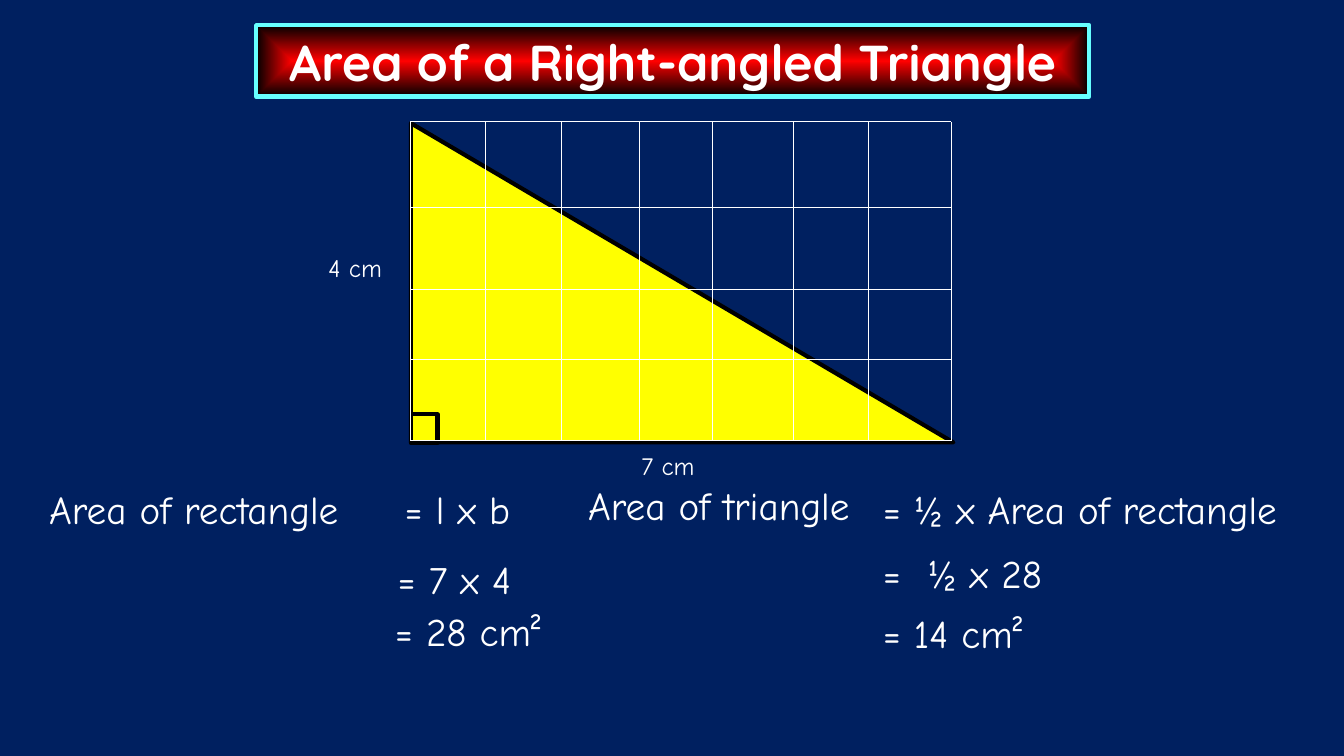
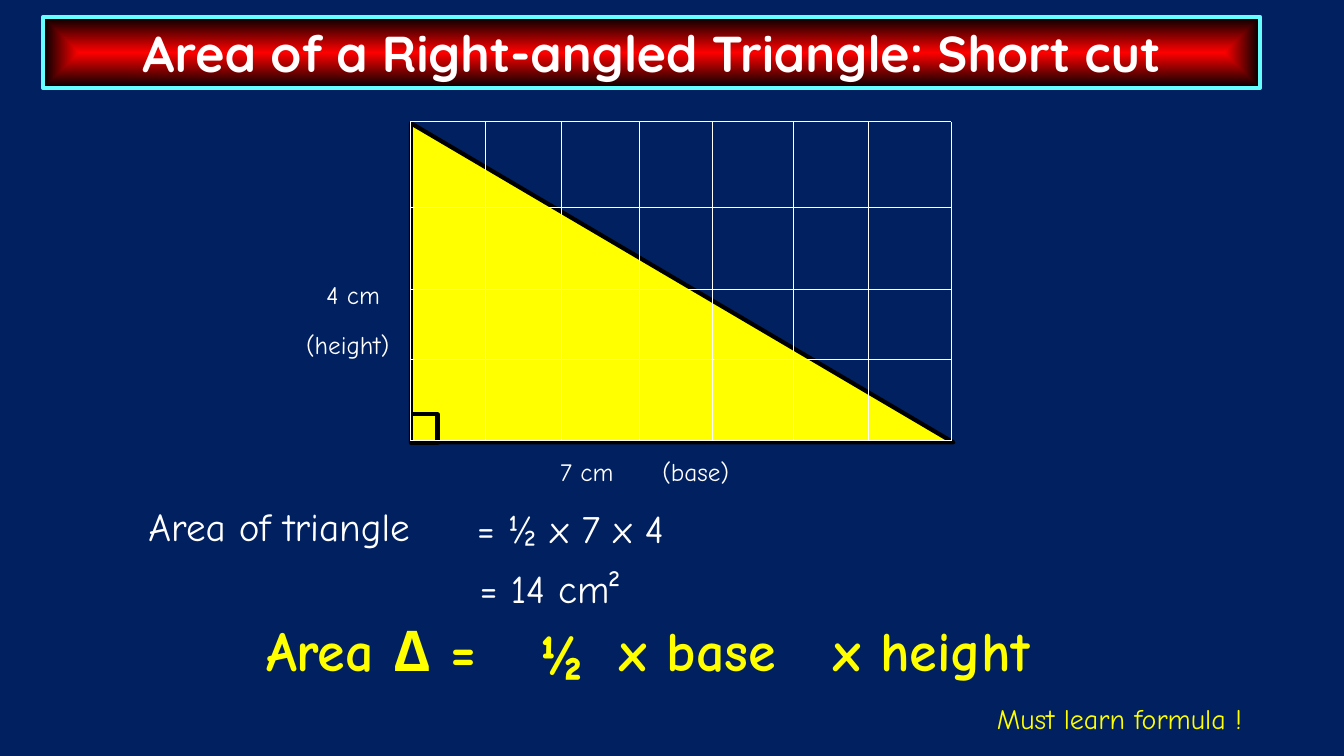
from dataclasses import dataclass

from lxml.etree import SubElement
from pptx import Presentation
from pptx.dml.color import RGBColor
from pptx.enum.shapes import MSO_CONNECTOR, MSO_SHAPE
from pptx.enum.text import MSO_ANCHOR, PP_ALIGN
from pptx.oxml.ns import qn
from pptx.util import Pt


@dataclass(frozen=True)
class Theme:
    navy: str = "002060"
    white: str = "FFFFFF"
    yellow: str = "FFFF00"
    black: str = "000000"
    red: str = "FF0000"
    cyan: str = "66FFFF"
    head_font: str = "Quicksand"
    text_font: str = "Comic Neue"
    head: int = 36
    big: int = 40
    body: int = 28
    note: int = 20
    label: int = 18
    thick: float = 3
    thin: float = 0.75


class Deck:
    """Hold the style and the current slide, and draw each kind of element."""

    def __init__(self, theme):
        self.theme = theme
        self.file = Presentation()
        self.file.slide_width, self.file.slide_height = Pt(960), Pt(540)
        self.slide = None

    def page(self):
        self.slide = self.file.slides.add_slide(self.file.slide_layouts[6])
        fill = self.slide.background.fill
        fill.solid()
        fill.fore_color.rgb = RGBColor.from_string(self.theme.navy)

    def add_run(self, part, text, size, font, color, bold=False):
        run = part.add_run()
        run.text = text
        run.font.size = Pt(size)
        run.font.name = font
        run.font.bold = bold
        run.font.color.rgb = RGBColor.from_string(color)

    def text(self, text, left, top, width, size=None, color=None, bold=False, tab=None):
        size = size or self.theme.body
        box = self.slide.shapes.add_textbox(Pt(left), Pt(top), Pt(width), Pt(1.2 * size + 7.2))
        box.text_frame.word_wrap = True
        part = box.text_frame.paragraphs[0]
        if tab:
            stops = SubElement(part._p.get_or_add_pPr(), qn("a:tabLst"))
            SubElement(stops, qn("a:tab"), pos=str(Pt(tab)), algn="l")
        self.add_run(part, text, size, self.theme.text_font, color or self.theme.white, bold)

    def label(self, text, left, top, width=55):
        self.text(text, left, top, width, self.theme.label)

    def shape(self, home, kind, left, top, width, height, edge):
        shape = home.add_shape(kind, Pt(left), Pt(top), Pt(width), Pt(height))
        shape.shadow.inherit = False
        shape.line.color.rgb = RGBColor.from_string(edge)
        shape.line.width = Pt(self.theme.thick)
        return shape

    def title(self, text, left, top, width):
        theme = self.theme
        bar = self.shape(self.slide.shapes, MSO_SHAPE.RECTANGLE, left, top, width, 51, theme.cyan)
        bar.fill.gradient()
        for stop, color in zip(bar.fill.gradient_stops, (theme.red, theme.black)):
            stop.color.rgb = RGBColor.from_string(color)
        grad = bar._element.spPr.find(qn("a:gradFill"))
        grad.remove(grad.find(qn("a:lin")))
        core = SubElement(grad, qn("a:path"), {"path": "shape"})
        SubElement(core, qn("a:fillToRect"), dict.fromkeys("ltrb", "50000"))
        frame = bar.text_frame
        frame.word_wrap = True
        frame.vertical_anchor = MSO_ANCHOR.MIDDLE
        frame.margin_top = frame.margin_bottom = Pt(3)
        part = frame.paragraphs[0]
        part.alignment = PP_ALIGN.CENTER
        self.add_run(part, text, theme.head, theme.head_font, theme.white, True)

    def line(self, home, left, top, right, end):
        line = home.add_connector(MSO_CONNECTOR.STRAIGHT, Pt(left), Pt(top), Pt(right), Pt(end))
        line.line.color.rgb = RGBColor.from_string(self.theme.white)
        line.line.width = Pt(self.theme.thin)
        SubElement(line._element.spPr, qn("a:effectLst"))

    def figure(self):
        home = self.slide.shapes.add_group_shape().shapes
        for kind, top, width, height in (
            (MSO_SHAPE.RIGHT_TRIANGLE, 88, 387.5, 228),
            (MSO_SHAPE.RECTANGLE, 296, 19, 20.5),
        ):
            part = self.shape(home, kind, 293.5, top, width, height, self.theme.black)
            part.fill.solid()
            part.fill.fore_color.rgb = RGBColor.from_string(self.theme.yellow)
        cols = (293, 347, 401, 457, 509, 566.5, 620.5, 679.5)
        rows = (87, 148.5, 207, 256.5, 315)
        grid = self.slide.shapes.add_group_shape().shapes
        for col in cols:
            self.line(grid, col, rows[0], col, rows[-1])
        for row in rows:
            self.line(grid, cols[0], row, cols[-1], row)


def main():
    theme = Theme()
    deck = Deck(theme)

    deck.page()
    deck.figure()
    deck.title("Area of a Right-angled Triangle", 183, 18, 595)
    deck.label("4 cm", 227.5, 177)
    deck.label("7 cm", 451, 318)
    deck.text("Area of rectangle", 28, 343, 248)
    deck.text("= l x b", 282, 343, 120)
    deck.text("= 7 x 4", 277, 393, 129)
    deck.text("= 28 cm²", 275, 430, 144)
    deck.text("Area of triangle", 413, 340.5, 225)
    deck.text("= ½ x Area of rectangle", 623.5, 343, 322)
    deck.text("=\t½ x 28", 623.5, 389, 132, tab=32)
    deck.text("= 14 cm²", 623.5, 432, 144)

    deck.page()
    deck.figure()
    deck.title("Area of a Right-angled Triangle: Short cut", 31, 12, 869)
    deck.label("4 cm", 226, 196)
    deck.label("(height)", 211.5, 232, 82)
    deck.label("7 cm", 393, 322.5)
    deck.label("(base)", 466, 322.5, 67)
    deck.text("Area of triangle", 99, 355, 225)
    deck.text("= ½ x 7 x 4", 333.5, 356.5, 156)
    deck.text("= 14 cm²", 335.5, 399.5, 144)
    for text, left, top, width in (
        ("Area Δ =", 183, 436, 215),
        ("½", 379, 438, 44),
        ("x base", 435.5, 436, 182),
        ("x height", 588, 436, 234),
    ):
        deck.text(text, left, top, width, theme.big, theme.yellow, True)
    deck.text("Must learn formula !", 705, 497.5, 203, theme.note, theme.yellow)

    deck.file.save("out.pptx")


if __name__ == "__main__":
    main()
